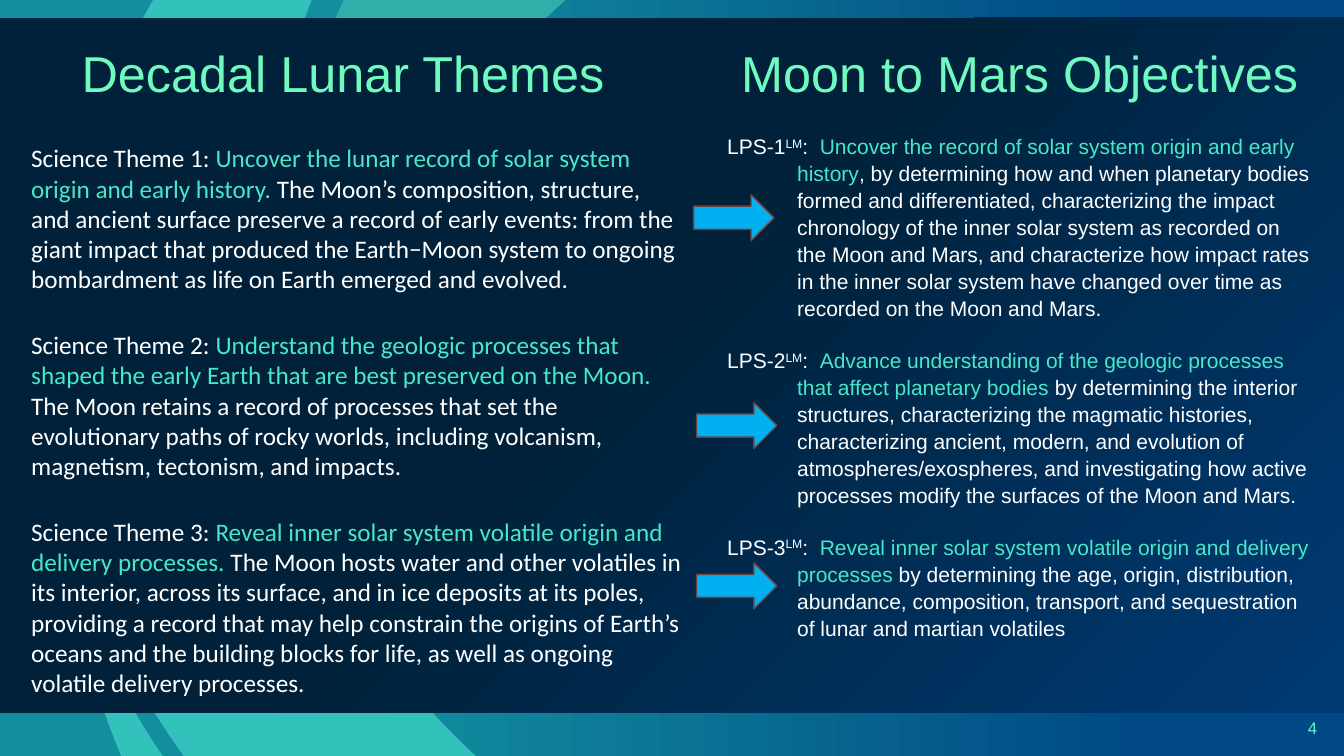
from dataclasses import dataclass

from lxml.etree import SubElement
from pptx import Presentation
from pptx.dml.color import RGBColor
from pptx.enum.shapes import MSO_SHAPE
from pptx.enum.text import MSO_ANCHOR, MSO_AUTO_SIZE, PP_ALIGN
from pptx.oxml.ns import qn
from pptx.util import Pt

# Content
LEFT_TITLE = "Decadal Lunar Themes"
RIGHT_TITLE = "Moon to Mars Objectives"
PAGE_NUMBER = "4"
THEMES = [  # label, highlight, detail
    ("Science Theme 1: ",
     "Uncover the lunar record of solar system origin and early history. ",
     "The Moon’s composition, structure, and ancient surface preserve a record of early events: "
     "from the giant impact that produced the Earth−Moon system to ongoing bombardment as life "
     "on Earth emerged and evolved."),
    ("Science Theme 2: ",
     "Understand the geologic processes that shaped the early Earth that are best preserved "
     "on the Moon. ",
     "The Moon retains a record of processes that set the evolutionary paths of rocky worlds, "
     "including volcanism, magnetism, tectonism, and impacts."),
    ("Science Theme 3: ",
     "Reveal inner solar system volatile origin and delivery processes. ",
     "The Moon hosts water and other volatiles in its interior, across its surface, and in ice "
     "deposits at its poles, providing a record that may help constrain the origins of Earth’s "
     "oceans and the building blocks for life, as well as ongoing volatile delivery processes."),
]
OBJECTIVES = [  # label, highlight, detail
    ("LPS-1",
     "Uncover the record of solar system origin and early history",
     ", by determining how and when planetary bodies formed and differentiated, characterizing "
     "the impact chronology of the inner solar system as recorded on the Moon and Mars, and "
     "characterize how impact rates in the inner solar system have changed over time as recorded "
     "on the Moon and Mars."),
    ("LPS-2",
     "Advance understanding of the geologic processes that affect planetary bodies ",
     "by determining the interior structures, characterizing the magmatic histories, "
     "characterizing ancient, modern, and evolution of atmospheres/exospheres, and investigating "
     "how active processes modify the surfaces of the Moon and Mars."),
    ("LPS-3",
     "Reveal inner solar system volatile origin and delivery processes ",
     "by determining the age, origin, distribution, abundance, composition, transport, and "
     "sequestration of lunar and martian volatiles"),
]
ARROWS = [(495.5, 139), (497.5, 287.5), (497.5, 402)]  # left, top


@dataclass(frozen=True)
class Theme:
    heading: str = "70FABF"
    highlight: str = "47E7C9"
    text: str = "FFFFFF"
    number: str = "5FFAC9"
    arrow: str = "00B0F0"
    arrow_line: str = "6D423C"
    ribbon: str = "33C1BC"
    ribbon_dark: str = "2FAEAA"
    backdrop: tuple = ((0.15, "004984"), (0.72, "128E9F"))
    panel: tuple = ((0, "003B75"), (0.54, "002139"))
    font: str = "Arial"
    theme_font: str = "Calibri"
    heading_size: int = 36
    theme_size: int = 18
    objective_size: int = 15
    number_size: int = 12


THEME = Theme()

# Ribbons: each contour is a start point, then lines (one point) or curves (three points)
RIBBONS = [
    (THEME.ribbon_dark, [
        [(257, 353), [(266, 432), (294, 484), (294, 484)], [(266, 438), (244, 395), (229, 353)]],
        [(266, 220), [(283, 150), (323, 73), (405, -1)], [(246, -1)],
         [(218, 59), (197, 134), (202, 220)]],
    ]),
    (THEME.ribbon, [
        [(117, 541), [(87, 498), (61, 444), (45, 379)], [(45, 379), (49, 450), (87, 541)]],
    ]),
    (THEME.ribbon, [
        [(49, 353), [(60, 413), (86, 478), (132, 541)], [(341, 541)],
         [(320, 522), (300, 500), (281, 476)], [(281, 476), (245, 430), (217, 353)]],
        [(41, 220), [(47, 133), (73, 74), (73, 74)], [(84, 47), (96, 23), (110, -1)],
         [(223, -1)], [(192, 79), (184, 154), (189, 220)]],
    ]),
]


def color(value):
    return RGBColor.from_string(value)


def place(shape, left, top, width, height):
    shape.left, shape.top, shape.width, shape.height = map(Pt, (left, top, width, height))


def add_gradient_rectangle(box, stops):
    shape = slide.shapes.add_shape(MSO_SHAPE.RECTANGLE, *map(Pt, box))
    shape.shadow.inherit = False
    shape.line.fill.background()
    shape.fill.gradient()
    shape.fill.gradient_angle = 180
    for stop, (position, value) in zip(shape.fill.gradient_stops, stops):
        stop.position = position
        stop.color.rgb = color(value)
    return shape


def add_ribbon(value, contours):
    builder = slide.shapes.build_freeform(*contours[0][0], scale=Pt(1))
    for index, (start, *segments) in enumerate(contours):
        if index:
            builder.move_to(*start)
        builder.add_line_segments([segment[-1] for segment in segments], close=True)
    shape = builder.convert_to_shape()
    shape.shadow.inherit = False
    shape.fill.solid()
    shape.fill.fore_color.rgb = color(value)
    shape.line.fill.background()

    # Bend the sides that have control points
    corners = [point for start, *segments in contours
               for point in (start, *(segment[-1] for segment in segments))]
    left, top = (min(axis) for axis in zip(*corners))
    segments = [segment for contour in contours for segment in contour[1:]]
    sides = list(shape.element.spPr.iter(qn("a:lnTo")))
    for side, segment in zip(sides, segments):
        if len(segment) == 3:
            curve = side.makeelement(qn("a:cubicBezTo"))
            for x, y in segment:
                SubElement(curve, qn("a:pt"), {"x": str(x - left), "y": str(y - top)})
            side.getparent().replace(side, curve)


def add_run(paragraph, text, size, value, font=THEME.font):
    run = paragraph.add_run()
    run.text = text
    run.font.name, run.font.size, run.font.color.rgb = font, Pt(size), color(value)
    return run


def prepare(shape, anchor=MSO_ANCHOR.TOP):
    frame = shape.text_frame
    frame.word_wrap = True
    frame.auto_size = MSO_AUTO_SIZE.NONE
    frame.vertical_anchor = anchor
    return frame


def write_line(shape, text, size, value, alignment):
    paragraph = prepare(shape, MSO_ANCHOR.MIDDLE).paragraphs[0]
    paragraph.alignment = alignment
    add_run(paragraph, text, size, value)
    return paragraph


def paragraphs_for(frame, items):
    for index, item in enumerate(items):
        yield index, frame.add_paragraph() if index else frame.paragraphs[0], item


presentation = Presentation()
presentation.slide_width, presentation.slide_height = Pt(960), Pt(540)
slide = presentation.slides.add_slide(presentation.slide_layouts[1])
title, body = slide.placeholders

# Backdrop, ribbons and dark panel
add_gradient_rectangle((-1, -0.5, 961, 540.5), THEME.backdrop)
for ribbon in RIBBONS:
    add_ribbon(*ribbon)
panel = add_gradient_rectangle((-0.5, 12.6, 960.5, 496.7), THEME.panel)
linear = panel.element.spPr.find(".//" + qn("a:lin"))
radial = SubElement(linear.getparent(), qn("a:path"), {"path": "circle"})
SubElement(radial, qn("a:fillToRect"), {"l": "100000", "t": "100000"})
linear.getparent().remove(linear)

# Headings, with the placeholders raised above the backdrop
for placeholder in (title, body):
    placeholder.element.getparent().append(placeholder.element)
place(title, 492.5, 30.6, 472, 47)
left_title = slide.shapes.add_textbox(Pt(22.5), Pt(30.6), Pt(445), Pt(47))
for shape, text in ((title, RIGHT_TITLE), (left_title, LEFT_TITLE)):
    heading = write_line(shape, text, THEME.heading_size, THEME.heading, PP_ALIGN.CENTER)
    heading.line_spacing = 0.9

# Objectives
place(body, 512.2, 90.5, 432.8, 373)
for index, paragraph, (label, highlight, detail) in paragraphs_for(prepare(body), OBJECTIVES):
    properties = paragraph._p.get_or_add_pPr()
    properties.set("marL", str(Pt(50)))
    properties.set("indent", str(-Pt(50)))
    SubElement(properties, qn("a:buNone"))
    paragraph.line_spacing = 1.07
    paragraph.space_before, paragraph.space_after = Pt(10 if index else 0), Pt(8)
    parts = ((label, THEME.text), ("LM", THEME.text), (":  ", THEME.text),
             (highlight, THEME.highlight), (detail, THEME.text))
    runs = [add_run(paragraph, text, THEME.objective_size, value) for text, value in parts]
    runs[1].font._element.set("baseline", "30000")

# Science themes
themes = slide.shapes.add_textbox(Pt(15.2), Pt(98.4), Pt(480), Pt(407))
for index, paragraph, parts in paragraphs_for(prepare(themes), THEMES):
    paragraph.space_before = Pt(25.4 if index else 0)
    for text, value in zip(parts, (THEME.text, THEME.highlight, THEME.text)):
        add_run(paragraph, text, THEME.theme_size, value, THEME.theme_font)

# Arrows from themes to objectives
for left, top in ARROWS:
    arrow = slide.shapes.add_shape(MSO_SHAPE.RIGHT_ARROW, Pt(left), Pt(top), Pt(57.5), Pt(33))
    arrow.shadow.inherit = False
    arrow.fill.solid()
    arrow.fill.fore_color.rgb = color(THEME.arrow)
    arrow.line.color.rgb, arrow.line.width = color(THEME.arrow_line), Pt(1)

# Slide number
number = slide.shapes.add_textbox(Pt(732), Pt(505.5), Pt(216), Pt(29))
write_line(number, PAGE_NUMBER, THEME.number_size, THEME.number, PP_ALIGN.RIGHT)

presentation.save("out.pptx")
